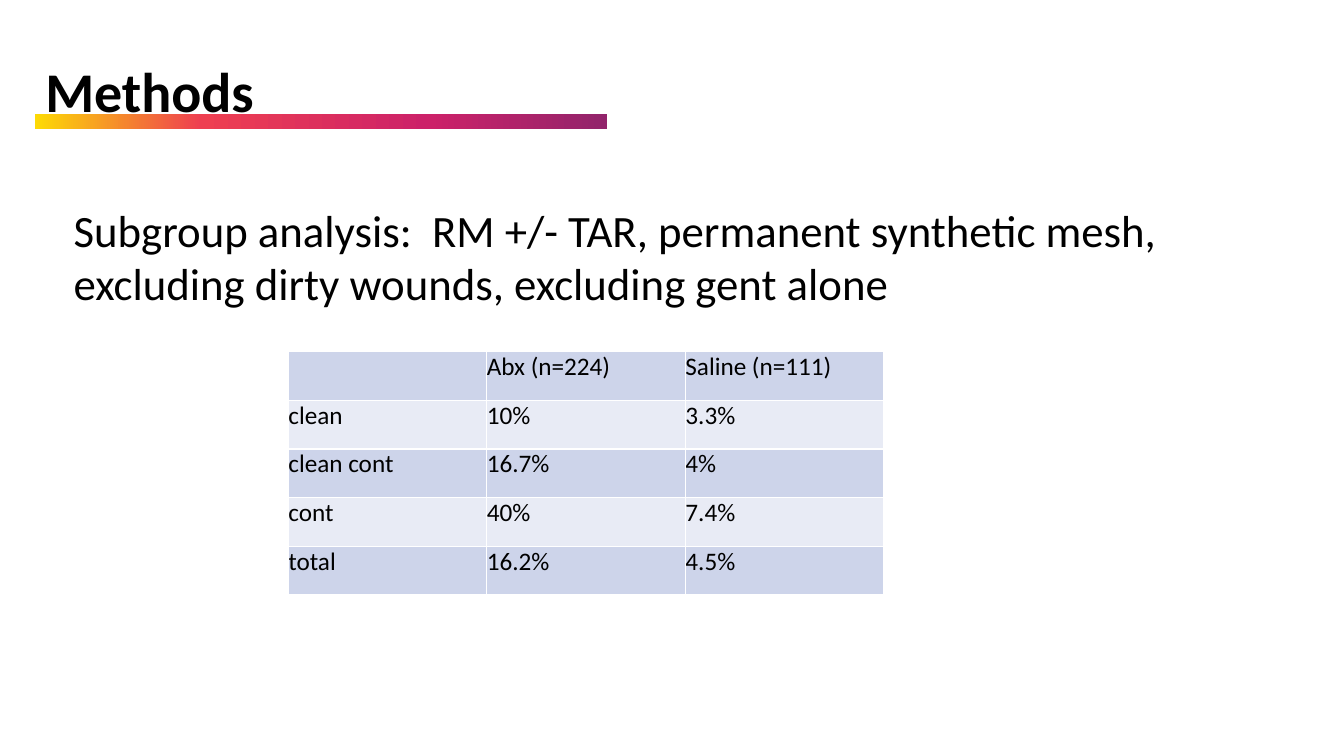
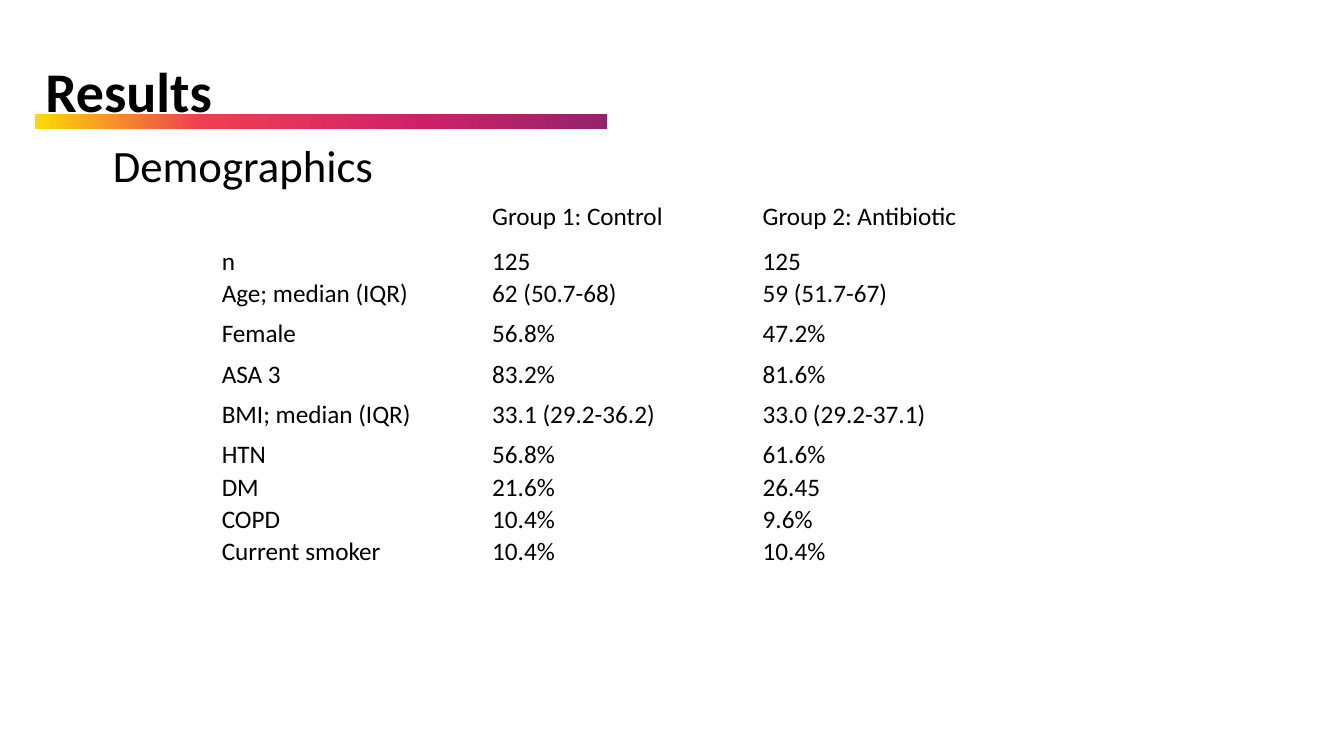
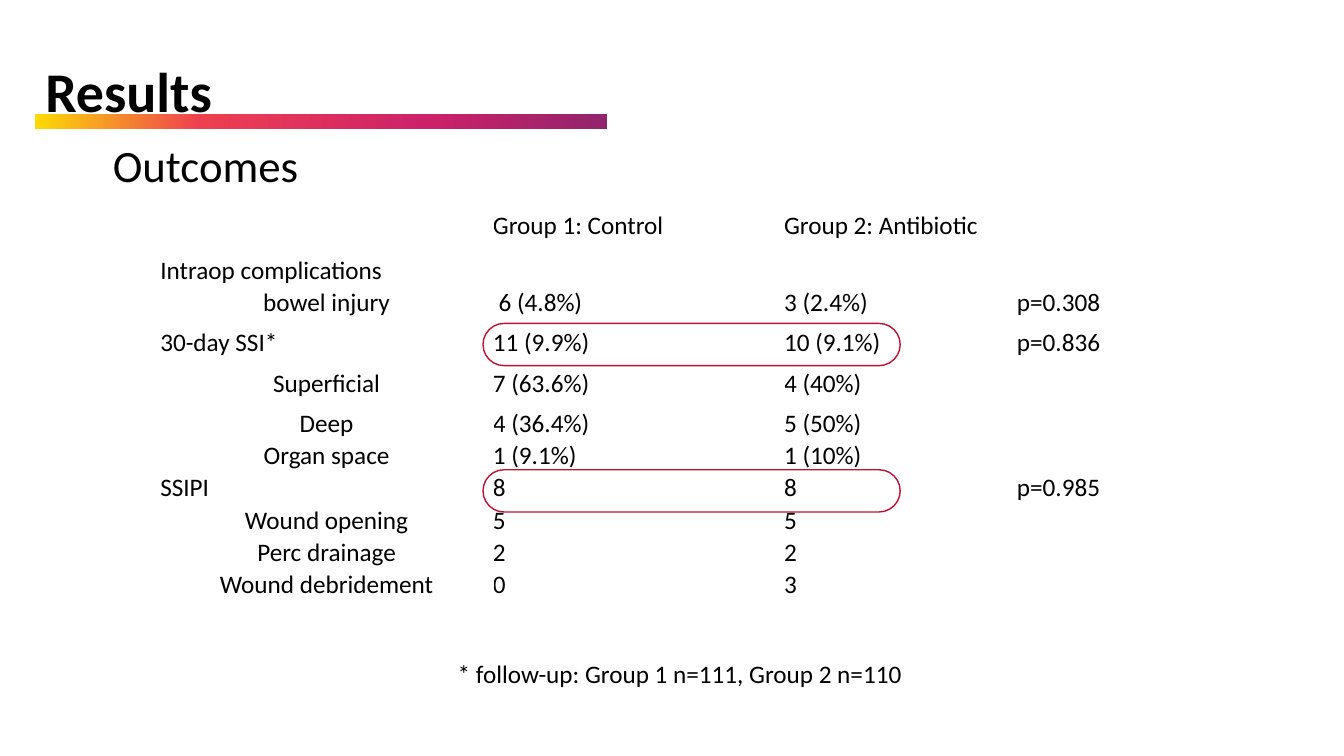
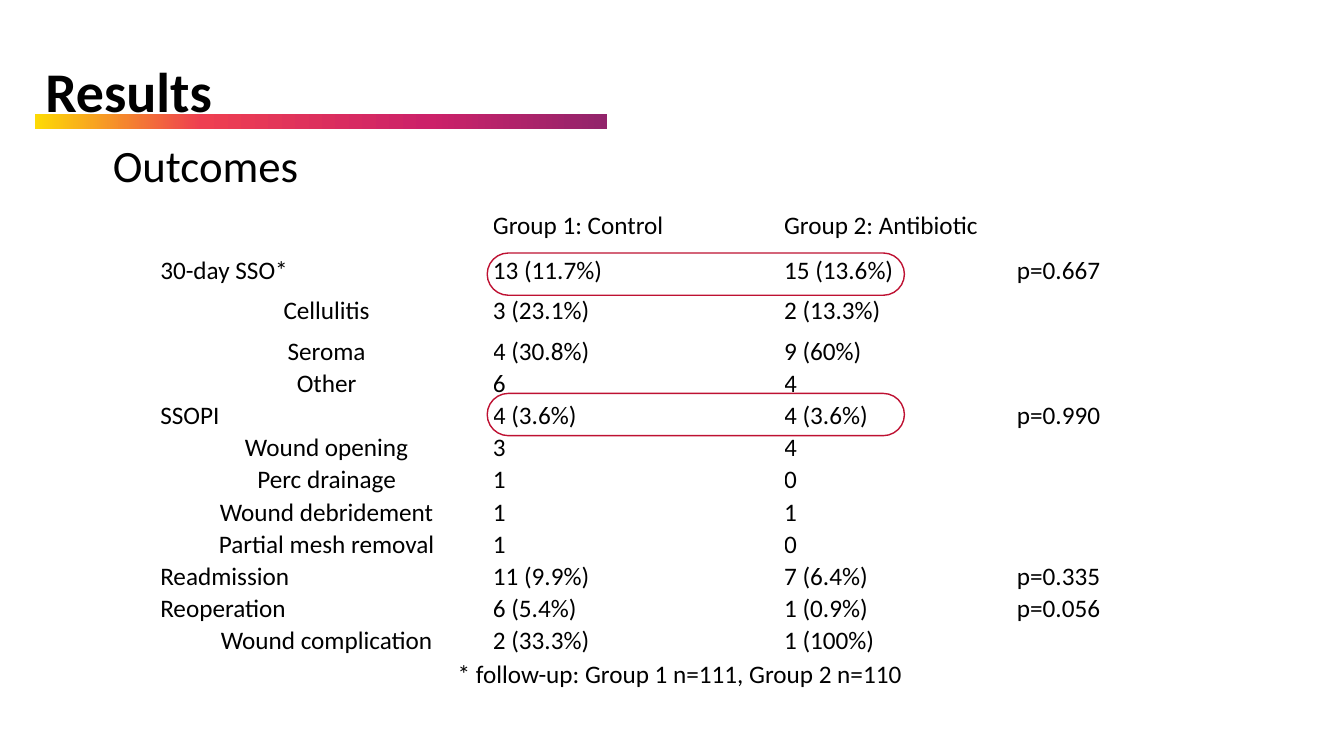
from copy import deepcopy

from pptx import Presentation
from pptx.dml.color import RGBColor as RGB
from pptx.enum.shapes import MSO_SHAPE as Shape
from pptx.enum.text import MSO_AUTO_SIZE as Fit, PP_ALIGN as Align
from pptx.oxml import parse_xml
from pptx.oxml.ns import nsdecls, qn
from pptx.util import Pt

HUE = {"ink": "000000", "white": "FFFFFF", "dark": "CDD4EA",
       "light": "E8EBF5", "ring": "BE1132", "gold": "FDDA05",
       "coral": "EE3F51", "pink": "CC2169", "plum": "92246B"}
STOPS = [(0, "gold"), (0.29, "coral"), (0.69, "pink"), (1, "plum")]
FONT = "Calibri"
LOW, TALL, HEAD = 23, 28.8, 32  # row heights

SUBS = {"bowel injury", "Superficial", "Deep", "Organ space", "Wound opening",
        "Perc drainage", "Wound debridement", "Cellulitis", "Seroma", "Other",
        "Partial mesh removal", "Wound complication"}
GROUPS = ["", "Group 1: Control", "Group 2: Antibiotic"]
WIDE = [237.6, 208, 166.3, 118.8]
NOTE = "* follow-up: Group 1 n=111, Group 2 n=110"

wounds = [
    ["", "Abx (n=224)", "Saline (n=111)"],
    ["clean", "10%", "3.3%"],
    ["clean cont", "16.7%", "4%"],
    ["cont", "40%", "7.4%"],
    ["total", "16.2%", "4.5%"],
]
people = [
    GROUPS,
    ["n", "125", "125"],
    ["Age; median (IQR)", "62 (50.7-68)", "59 (51.7-67)"],
    ["Female", "56.8%", "47.2%"],
    ["ASA 3", "83.2%", "81.6%"],
    ["BMI; median (IQR)", "33.1 (29.2-36.2)", "33.0 (29.2-37.1)"],
    ["HTN", "56.8%", "61.6%"],
    ["DM", "21.6%", "26.45"],
    ["COPD", "10.4%", "9.6%"],
    ["Current smoker", "10.4%", "10.4%"],
    [],
]
sites = [
    GROUPS,
    ["Intraop complications"],
    ["bowel injury", " 6 (4.8%)", "3 (2.4%)", "p=0.308"],
    ["30-day SSI*", "11 (9.9%)", "10 (9.1%)", "p=0.836"],
    ["Superficial", "7 (63.6%)", "4 (40%)"],
    ["Deep", "4 (36.4%)", "5 (50%)"],
    ["Organ space", "1 (9.1%)", "1 (10%)"],
    ["SSIPI", "8", "8", "p=0.985"],
    ["Wound opening", "5", "5"],
    ["Perc drainage", "2", "2"],
    ["Wound debridement", "0", "3"],
    [],
]
events = [
    GROUPS,
    ["30-day SSO*", "13 (11.7%)", "15 (13.6%)", "p=0.667"],
    ["Cellulitis", "3 (23.1%)", "2 (13.3%)"],
    ["Seroma", "4 (30.8%)", "9 (60%)"],
    ["Other", "6", "4"],
    ["SSOPI", "4 (3.6%)", "4 (3.6%)", "p=0.990"],
    ["Wound opening", "3", "4"],
    ["Perc drainage", "1", "0"],
    ["Wound debridement", "1", "1"],
    ["Partial mesh removal", "1", "0"],
    ["Readmission", "11 (9.9%)", "7 (6.4%)", "p=0.335"],
    ["Reoperation", "6 (5.4%)", "1 (0.9%)", "p=0.056"],
    ["Wound complication", "2 (33.3%)", "1 (100%)"],
]


def style(para, size, bold=False):
    for run in para.runs:
        run.font.name = FONT
        run.font.size = Pt(size)
        run.font.bold = bold
        run.font.color.rgb = RGB.from_string(HUE["ink"])


def add_text(slide, text, box, size, bold=False, wrap=True):
    frame = slide.shapes.add_textbox(*map(Pt, box)).text_frame
    frame.margin_left = frame.margin_right = Pt(3.6)
    frame.margin_top = frame.margin_bottom = Pt(3.6)
    frame.word_wrap = wrap
    frame.auto_size = Fit.SHAPE_TO_FIT_TEXT
    frame.text = text
    style(frame.paragraphs[0], size, bold)


deck = Presentation()
deck.slide_width, deck.slide_height = Pt(960), Pt(540)

# title, lead text and its box, table rows, left, top, widths, heights,
# fills by turns, left edge and tops of the rings
lead = ("Subgroup analysis:  RM +/- TAR, permanent synthetic mesh, "
        "excluding dirty wounds, excluding gent alone")
under = (77, 95, 313, 46)
pages = [
    ("Methods", lead, (49, 141, 828, 201), wounds, 206, 251.3,
     [141.8] * 3, [34.7] * 5, ["dark", "light"], 0, []),
    ("Results", "Demographics", under, people, 158.4, 144, [193.2] * 3,
     [HEAD, LOW] + [TALL] * 4 + [LOW] * 5, ["white"], 0, []),
    ("Results", "Outcomes", under, sites, 114.5, 150.5, WIDE,
     [HEAD, LOW] + [TALL] * 3 + [LOW] * 7, ["white"], 345, [231, 335.5]),
    ("Results", "Outcomes", under, events, 114.5, 150.5, WIDE,
     [HEAD] + [TALL] * 2 + [LOW] * 10, ["white"], 348, [180.7, 281]),
]

for (title, text, box, rows, left, top, wides, highs, fills,
     edge, rings) in pages:
    slide = deck.slides.add_slide(deck.slide_layouts[6])
    add_text(slide, title, (28.8, 36.7, 224, 56), 40, bold=True)

    bar = slide.shapes.add_shape(Shape.RECTANGLE, Pt(25.2), Pt(81.4),
                                 Pt(408.2), Pt(10.8))
    bar.shadow.inherit = False
    bar.line.fill.background()
    bar.fill.gradient()
    bar.fill.gradient_angle = 0
    stops = next(bar._element.iter(qn("a:gsLst")))
    while len(stops) < len(STOPS):
        stops.append(deepcopy(stops[0]))
    for stop, (place, hue) in zip(bar.fill.gradient_stops, STOPS):
        stop.position = place
        stop.color.rgb = RGB.from_string(HUE[hue])

    add_text(slide, text, box, 32)

    table = slide.shapes.add_table(
        len(rows), len(wides), Pt(left), Pt(top),
        Pt(sum(wides)), Pt(sum(highs))).table
    table.first_row = table.horz_banding = False
    for col, wide in zip(table.columns, wides):
        col.width = Pt(wide)
    for r, (row, high) in enumerate(zip(rows, highs)):
        table.rows[r].height = Pt(high)
        for c in range(len(wides)):
            cell = table.cell(r, c)
            cell.margin_left = cell.margin_right = 0
            cell.margin_top = cell.margin_bottom = 0
            props = cell._tc.get_or_add_tcPr()
            for side in "LRTB":
                props.append(parse_xml(
                    f'<a:ln{side} {nsdecls("a")} w="{Pt(1)}"><a:solidFill>'
                    f'<a:srgbClr val="{HUE["white"]}"/></a:solidFill>'
                    f'</a:ln{side}>'))
            cell.fill.solid()
            cell.fill.fore_color.rgb = RGB.from_string(
                HUE[fills[r % len(fills)]])
            if c < len(row) and row[c]:
                cell.text_frame.text = row[c]
                para = cell.text_frame.paragraphs[0]
                if row[c] in SUBS:
                    para.alignment = Align.CENTER
                style(para, 18)

    if rings:
        add_text(slide, NOTE, (323.3, 466.6, 325.4, 29.5), 18, wrap=False)
    for y in rings:
        ring = slide.shapes.add_shape(Shape.ROUNDED_RECTANGLE, Pt(edge),
                                      Pt(y), Pt(298), Pt(30.2))
        ring.adjustments[0] = 0.5
        ring.shadow.inherit = False
        ring.fill.background()
        ring.line.color.rgb = RGB.from_string(HUE["ring"])
        ring.line.width = Pt(1)

deck.save("out.pptx")
